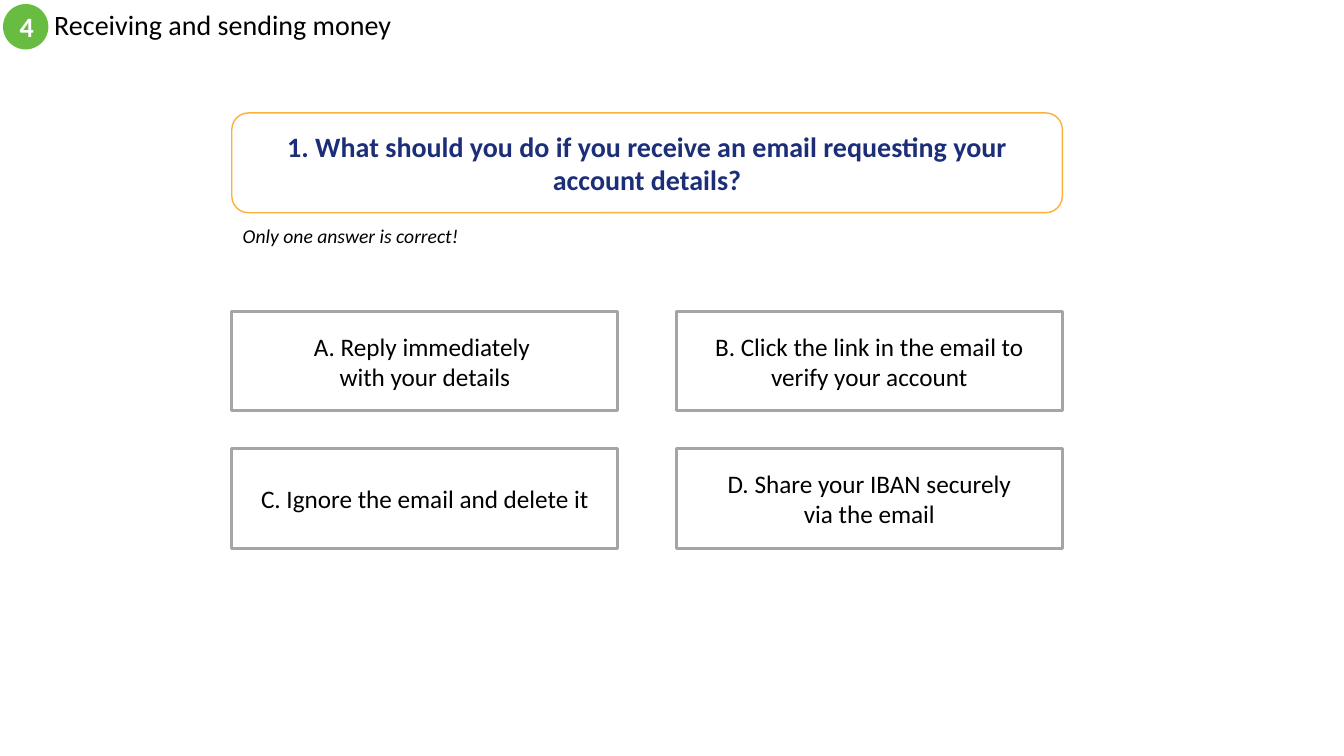
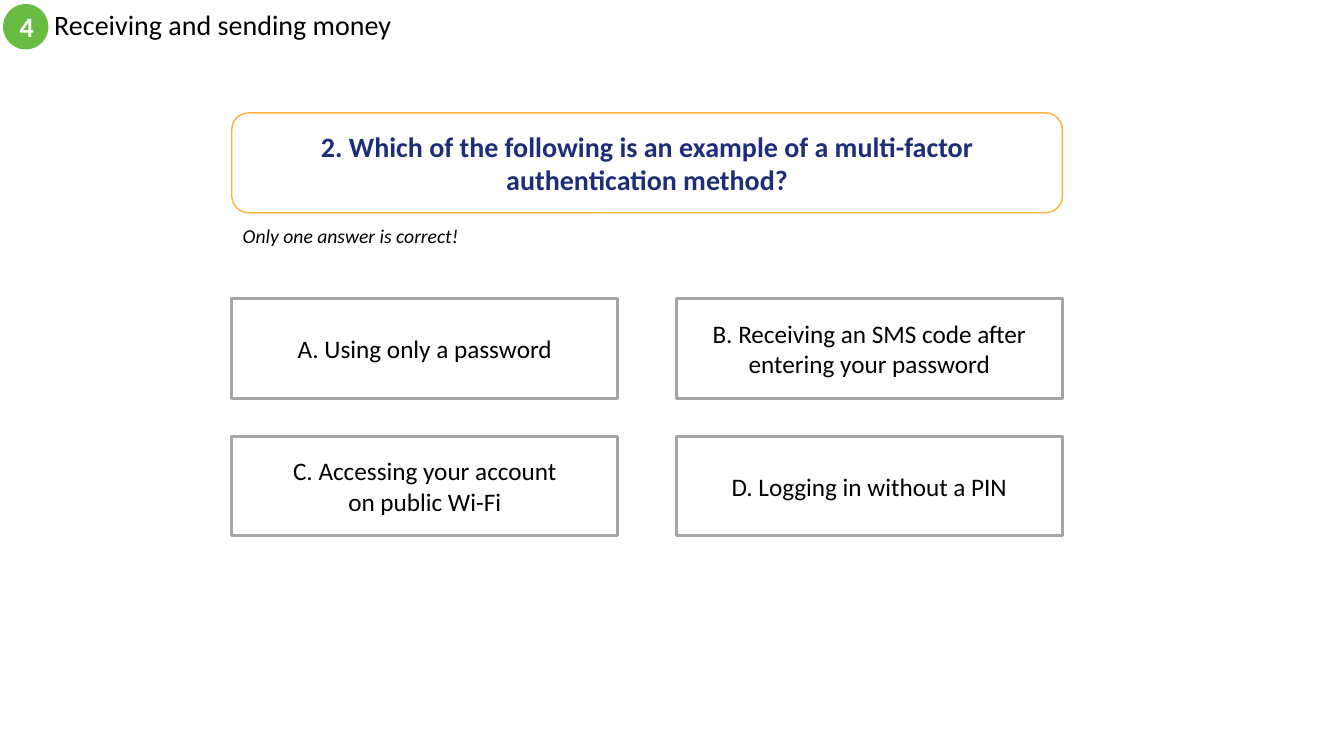
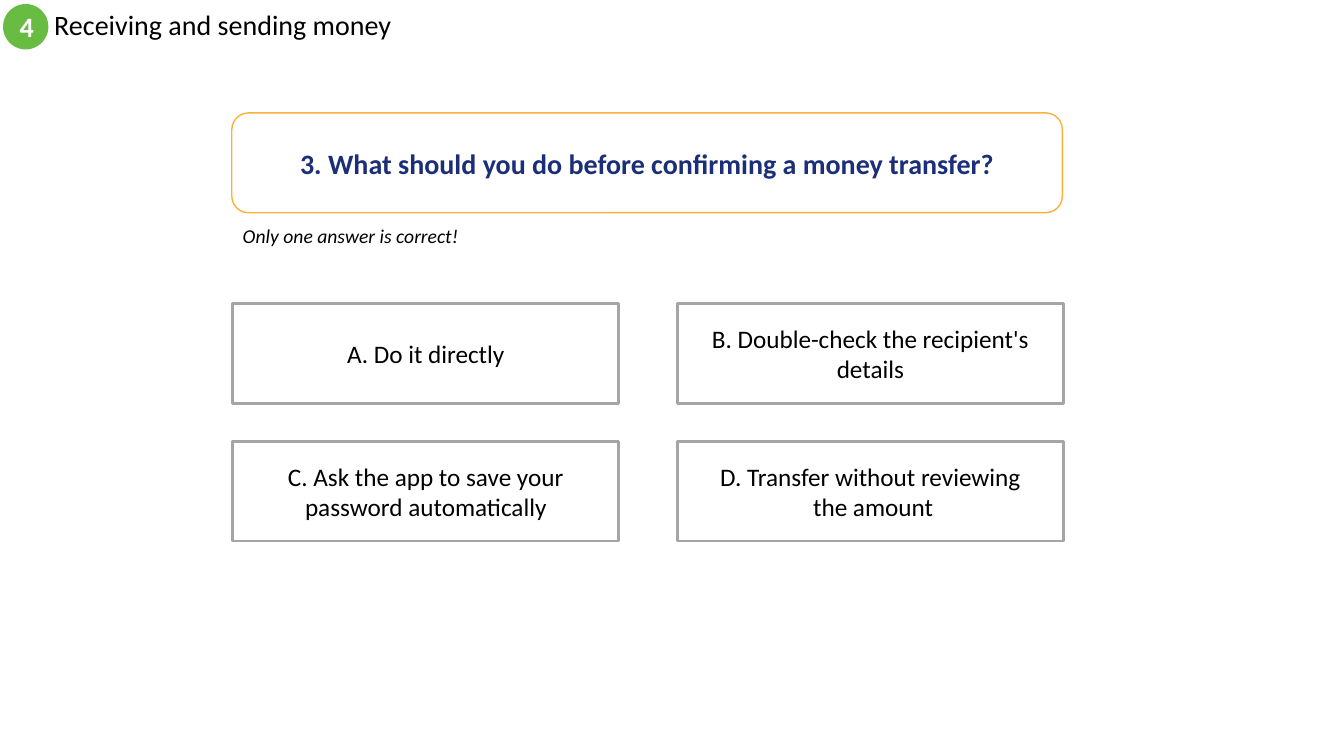
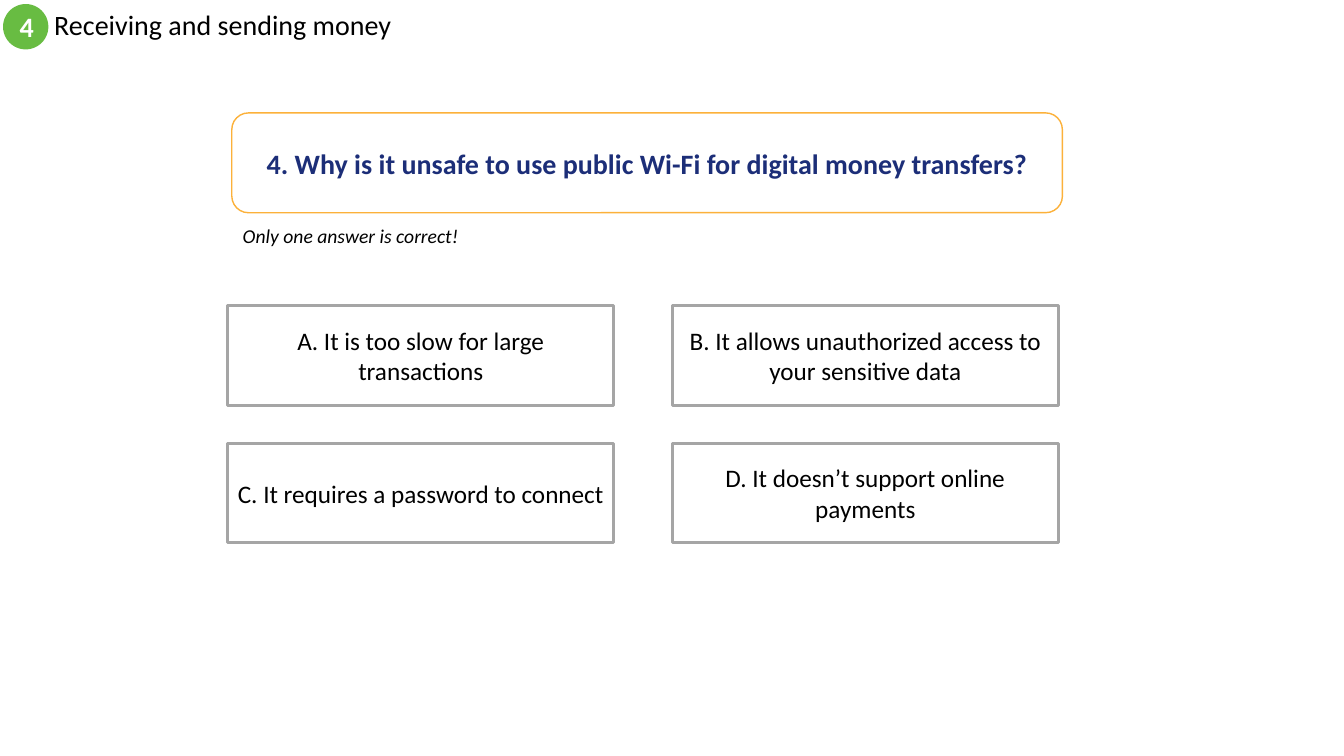
import pptx
import pptx.dml.color
import pptx.enum.shapes
import pptx.enum.text
import pptx.util

Pt = pptx.util.Pt
RGBColor = pptx.dml.color.RGBColor
Shape = pptx.enum.shapes.MSO_SHAPE
Align = pptx.enum.text.PP_ALIGN
Anchor = pptx.enum.text.MSO_ANCHOR

WHITE = RGBColor(0xFF, 0xFF, 0xFF)
BLACK = RGBColor(0x00, 0x00, 0x00)
GREEN = RGBColor(0x68, 0xBC, 0x42)
ORANGE = RGBColor(0xFC, 0xB1, 0x3A)
NAVY = RGBColor(0x1C, 0x2E, 0x78)
GREY = RGBColor(0xA5, 0xA5, 0xA5)

FONT = "Calibri"
SECTION_NUMBER = "4"
SECTION_TITLE = "Receiving and sending money"
HINT = "Only one answer is correct!"

# Boxes are (left, top, width, height) in points
HEADER_BOX = (2.16, 2.88, 605, 32.4)
QUESTION_BOX = (165.6, 80.64, 593.28, 71.28)
HINT_BOX = (166.32, 156.24, 169.92, 24.48)
ANSWER_SIZE = (593.28, 169.5)
COLUMN_GAP, ROW_GAP = 41.76, 27

# Question, left and top of the answer grid, answers
QUIZ = [
    ("1. What should you do if you receive an email requesting your account details?",
     (165.6, 222.3),
     ["A. Reply immediately \nwith your details",
      "B. Click the link in the email to verify your account",
      "C. Ignore the email and delete it",
      "D. Share your IBAN securely\nvia the email"]),
    ("2. Which of the following is an example of a multi-factor authentication method?",
     (165.6, 213.3),
     ["A. Using only a password",
      "B. Receiving an SMS code after entering your password",
      "C. Accessing your account\non public Wi-Fi",
      "D. Logging in without a PIN"]),
    ("3. What should you do before confirming a money transfer?",
     (166.32, 217),
     ["A. Do it directly",
      "B. Double-check the recipient's details",
      "C. Ask the app to save your password automatically",
      "D. Transfer without reviewing\n the amount"]),
    ("4. Why is it unsafe to use public Wi-Fi for digital money transfers?",
     (162.72, 218.3),
     ["A. It is too slow for large transactions",
      "B. It allows unauthorized access to your sensitive data",
      "C. It requires a password to connect",
      "D. It doesn’t support online payments"]),
]


def write(holder, text, size, color=BLACK, bold=False, italic=False,
          align=Align.LEFT, anchor=Anchor.MIDDLE):
    """Put one paragraph into a shape; a newline becomes a line break."""
    frame = holder.text_frame
    frame.word_wrap = True
    frame.vertical_anchor = anchor
    paragraph = frame.paragraphs[0]
    paragraph.text = text
    paragraph.alignment = align
    for run in paragraph.runs:
        font = run.font
        font.name, font.size = FONT, Pt(size)
        font.bold, font.italic = bold, italic
        font.color.rgb = color
    return paragraph


def add_panel(slide, kind, box, fill, line=None, line_width=1):
    panel = slide.shapes.add_shape(kind, *map(Pt, box))
    panel.shadow.inherit = False
    panel.fill.solid()
    panel.fill.fore_color.rgb = fill
    if line is None:
        panel.line.fill.background()
    else:
        panel.line.color.rgb = line
        panel.line.width = Pt(line_width)
    return panel


def add_header(slide, box):
    left, top, width, height = box
    # Section number
    badge = add_panel(slide, Shape.OVAL, (left, top, height, height), GREEN)
    write(badge, SECTION_NUMBER, 20, WHITE, bold=True, align=Align.CENTER)
    # Section title, tucked close to the badge
    indent = height - 2.88
    title = slide.shapes.add_textbox(
        Pt(left + indent), Pt(top), Pt(width - indent), Pt(height))
    write(title, SECTION_TITLE, 20).line_spacing = 0.9


def add_question(slide, box, question):
    panel = add_panel(slide, Shape.ROUNDED_RECTANGLE, box, WHITE, ORANGE)
    write(panel, question, 20, NAVY, bold=True, align=Align.CENTER)


def add_hint(slide, box):
    hint = slide.shapes.add_textbox(*map(Pt, box))
    write(hint, HINT, 14, italic=True, anchor=Anchor.TOP)
    hint.text_frame.auto_size = pptx.enum.text.MSO_AUTO_SIZE.SHAPE_TO_FIT_TEXT


def add_answers(slide, box, answers):
    """Fill the box with a grid of two columns and two rows."""
    left, top, width, height = box
    cell_width = (width - COLUMN_GAP) / 2
    cell_height = (height - ROW_GAP) / 2
    for index, answer in enumerate(answers):
        row, column = divmod(index, 2)
        cell = (left + column * (cell_width + COLUMN_GAP),
                top + row * (cell_height + ROW_GAP), cell_width, cell_height)
        panel = add_panel(slide, Shape.RECTANGLE, cell, WHITE, GREY, 2)
        write(panel, answer, 18, align=Align.CENTER)


def add_quiz_slide(deck, question, answers_at, answers):
    slide = deck.slides.add_slide(deck.slide_layouts[6])
    add_header(slide, HEADER_BOX)
    add_question(slide, QUESTION_BOX, question)
    add_hint(slide, HINT_BOX)
    add_answers(slide, answers_at + ANSWER_SIZE, answers)


def main():
    deck = pptx.Presentation()
    deck.slide_width, deck.slide_height = Pt(960), Pt(540)
    for question, answers_at, answers in QUIZ:
        add_quiz_slide(deck, question, answers_at, answers)
    deck.save("out.pptx")


if __name__ == "__main__":
    main()
